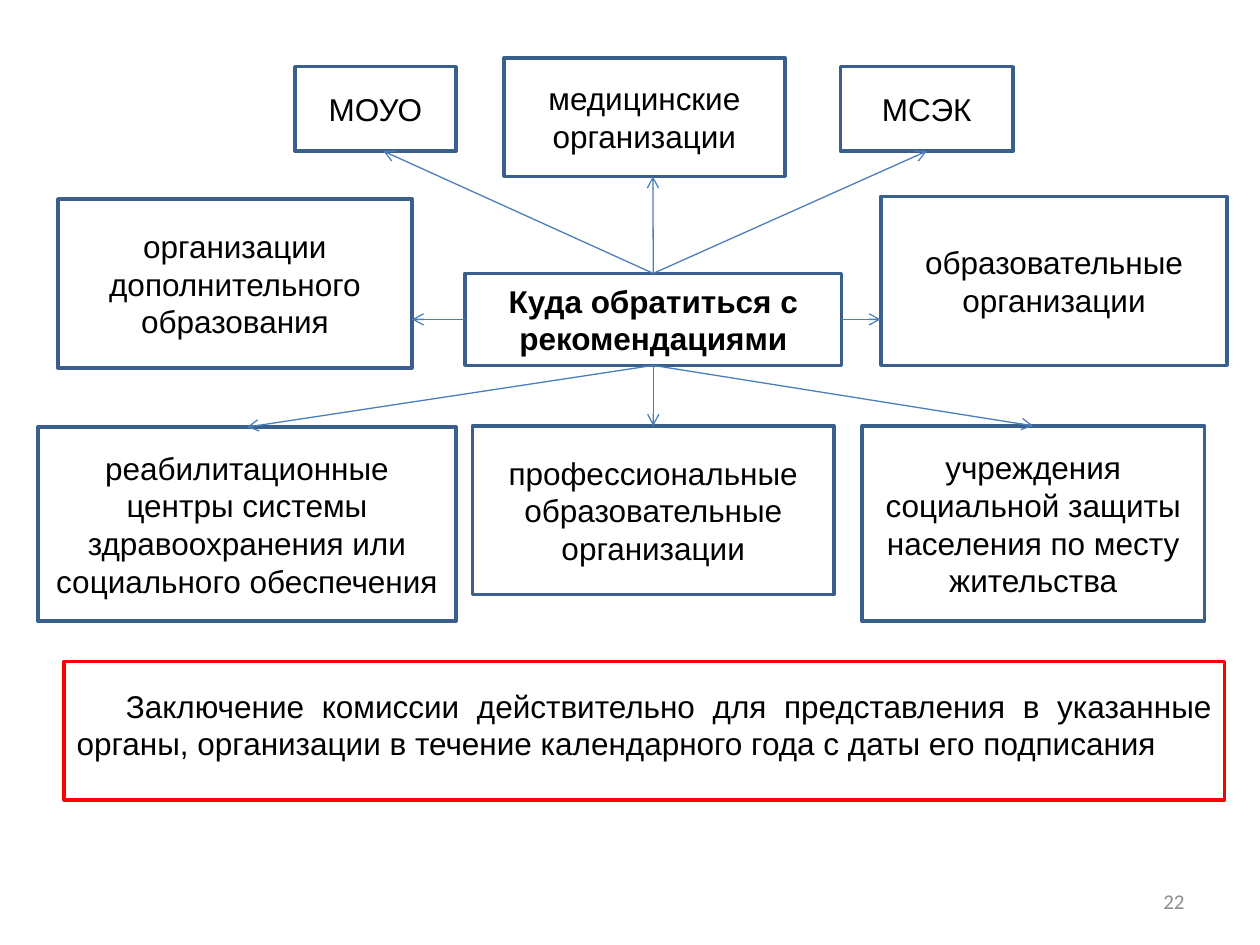
from collections import namedtuple

from lxml.etree import SubElement
from pptx import Presentation
from pptx.dml.color import RGBColor
from pptx.enum.shapes import MSO_CONNECTOR, MSO_SHAPE
from pptx.enum.text import MSO_ANCHOR, PP_ALIGN
from pptx.oxml.ns import qn
from pptx.util import Inches, Pt

COLUMNS, ROWS = 100, 75
CELL = Inches(10) / COLUMNS

BLACK, WHITE, GREY = "000000", "FFFFFF", "8C8C8C"
BORDER, ARROW, RED = "3A5F8C", "4B7EBC", "FF0000"

Box = namedtuple("Box", "left top width height")

# Text, box in grid cells, side of the hub it stands on, arrow's place along its edge
RECIPIENTS = [
    ("организации дополнительного образования", Box(4.6, 15.8, 28.1, 13.4), "left", 0.5),
    ("образовательные организации", Box(69.9, 15.6, 27.5, 13.4), "right", 0.5),
    ("МОУО", Box(23.4, 5.3, 12.8, 6.7), "top", 0.55),
    ("медицинские организации", Box(40, 4.6, 22.3, 9.4), "top", 0.53),
    ("МСЭК", Box(66.7, 5.3, 13.7, 6.7), "top", 0.5),
    ("реабилитационные центры системы здравоохранения или социального обеспечения",
     Box(3, 33.9, 33.2, 15.4), "bottom", 0.5),
    ("профессиональные образовательные организации", Box(37.5, 33.8, 28.7, 13.4), "bottom", 0.5),
    ("учреждения социальной защиты населения по месту жительства",
     Box(68.4, 33.8, 27.2, 15.5), "bottom", 0.5),
]


def color(value):
    return RGBColor.from_string(value)


def cells(*counts):
    """Convert grid cells to slide lengths."""
    return [round(count * CELL) for count in counts]


def write(shape, text, size=18, font="Arial", ink=BLACK, bold=False,
          align=PP_ALIGN.CENTER, anchor=MSO_ANCHOR.MIDDLE, indent=0):
    frame = shape.text_frame
    frame.word_wrap = True
    frame.vertical_anchor = anchor
    para = frame.paragraphs[0]
    para.alignment = align
    if indent:
        para._p.get_or_add_pPr().set("indent", str(cells(indent)[0]))
    span = para.add_run()
    span.text = text
    span.font.name, span.font.size, span.font.bold = font, Pt(size), bold
    span.font.color.rgb = color(ink)


def add_frame(page, box, line=BORDER, fill=WHITE):
    shape = page.shapes.add_shape(MSO_SHAPE.RECTANGLE, *cells(*box))
    shape.shadow.inherit = False
    if fill:
        shape.fill.solid()
        shape.fill.fore_color.rgb = color(fill)
    else:
        shape.fill.background()
    shape.line.color.rgb = color(line)
    shape.line.width = Pt(2)
    return shape


def add_arrow(page, start, end):
    arrow = page.shapes.add_connector(MSO_CONNECTOR.STRAIGHT, *cells(*start, *end))
    arrow.line.color.rgb = color(ARROW)
    arrow.line.width = Pt(0.75)
    SubElement(arrow.line._get_or_add_ln(), qn("a:tailEnd"), type="arrow")
    SubElement(arrow._element.spPr, qn("a:effectLst"))


def edge_point(box, side, share=0.5):
    """Point on one side of a box, at a share of that side's length."""
    across = box.left + box.width * share
    down = box.top + box.height * share
    return {
        "left": (box.left, down),
        "right": (box.left + box.width, down),
        "top": (across, box.top),
        "bottom": (across, box.top + box.height),
    }[side]


def add_hub_diagram(page, hub):
    opposite = {"left": "right", "right": "left", "top": "bottom", "bottom": "top"}
    write(add_frame(page, hub), "Куда обратиться с рекомендациями", bold=True)
    for text, box, side, share in RECIPIENTS:
        write(add_frame(page, box), text)
        start = edge_point(hub, side)
        across, down = edge_point(box, opposite[side], share)
        if side in ("left", "right"):
            down = start[1]
        add_arrow(page, start, (across, down))


def add_notice(page, box):
    add_frame(page, box, line=RED, fill=None)
    note = page.shapes.add_textbox(*cells(*box._replace(top=box.top + 1.5)))
    write(note, "Заключение комиссии действительно для представления в указанные органы, "
                "организации в течение календарного года с даты его подписания",
          align=PP_ALIGN.JUSTIFY, anchor=MSO_ANCHOR.TOP, indent=3.9)


def add_page_number(page, box):
    write(page.shapes.add_textbox(*cells(*box)), "22", size=12, font="Calibri",
          ink=GREY, align=PP_ALIGN.RIGHT)


def main():
    deck = Presentation()
    deck.slide_width, deck.slide_height = cells(COLUMNS, ROWS)
    page = deck.slides.add_slide(deck.slide_layouts[6])
    add_hub_diagram(page, Box(36.9, 21.7, 29.9, 7.3))
    add_notice(page, Box(5.1, 52.5, 92.1, 11))
    add_page_number(page, Box(71.7, 69.5, 23.3, 4))
    deck.save("out.pptx")


if __name__ == "__main__":
    main()
